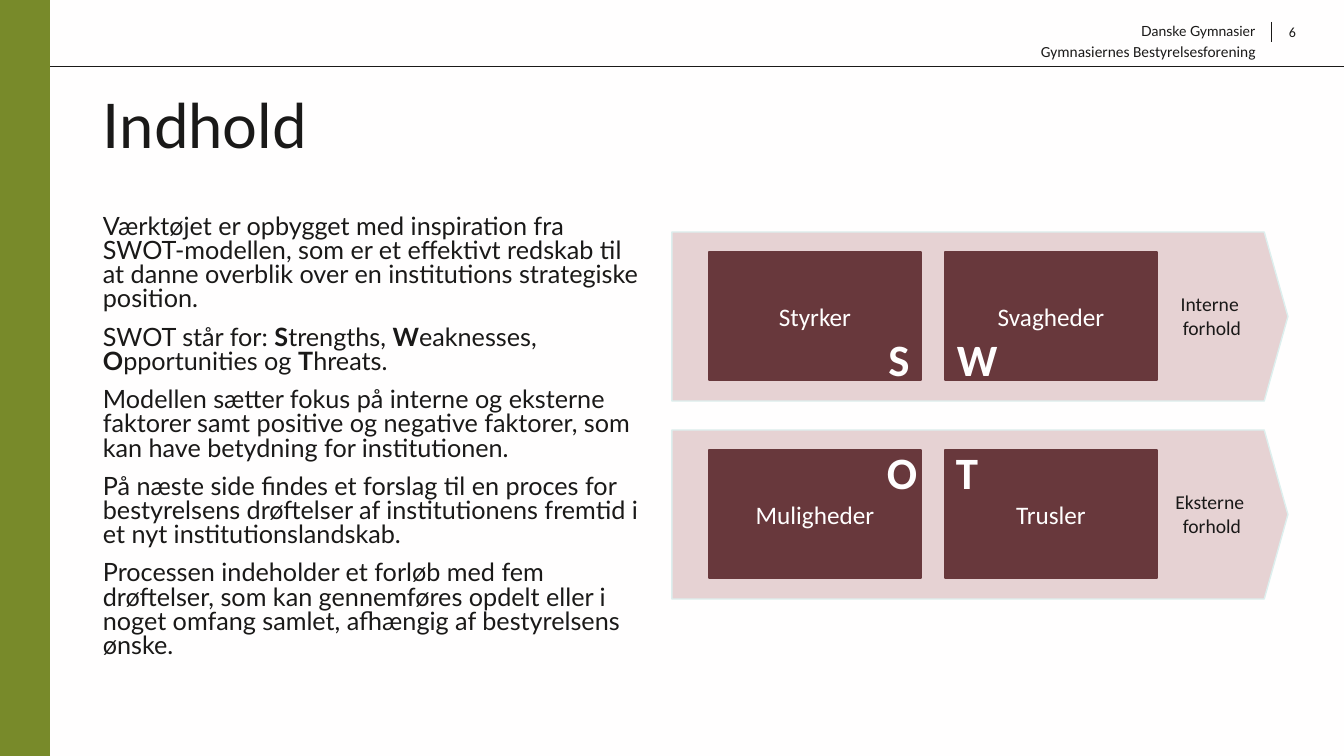
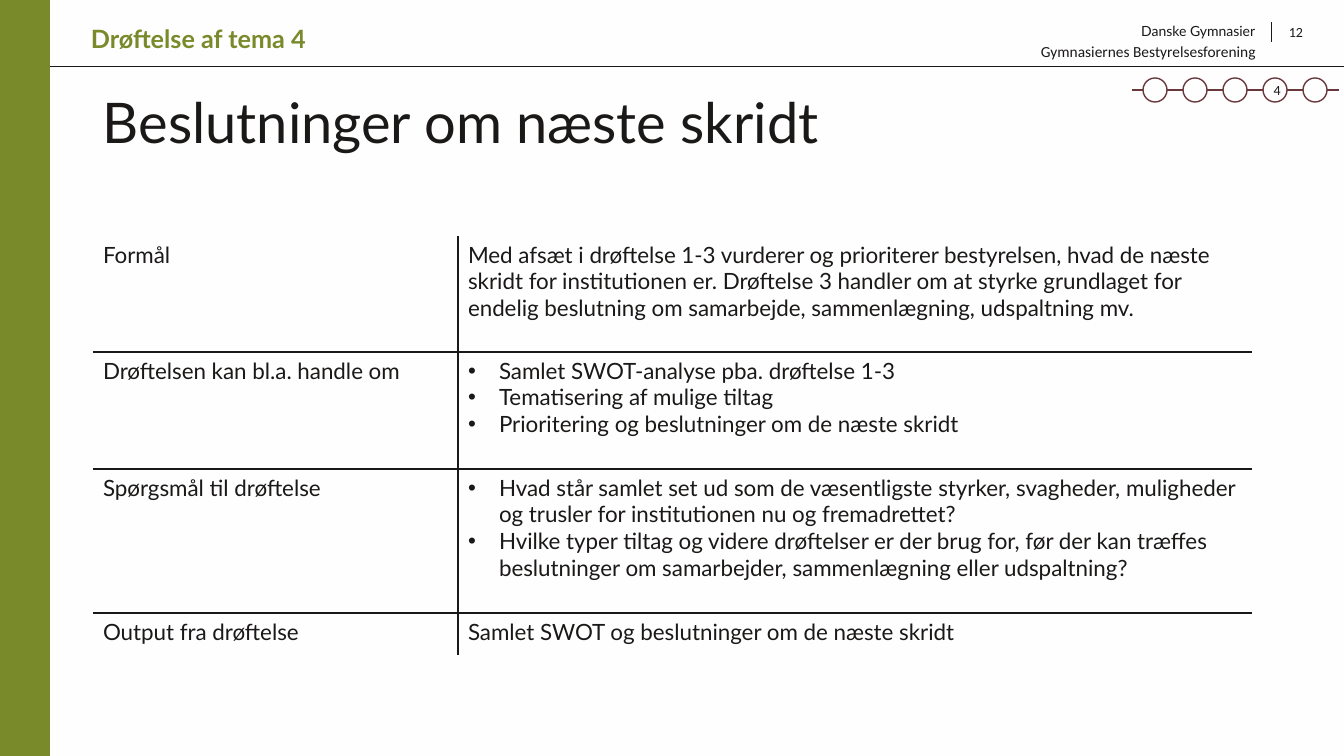
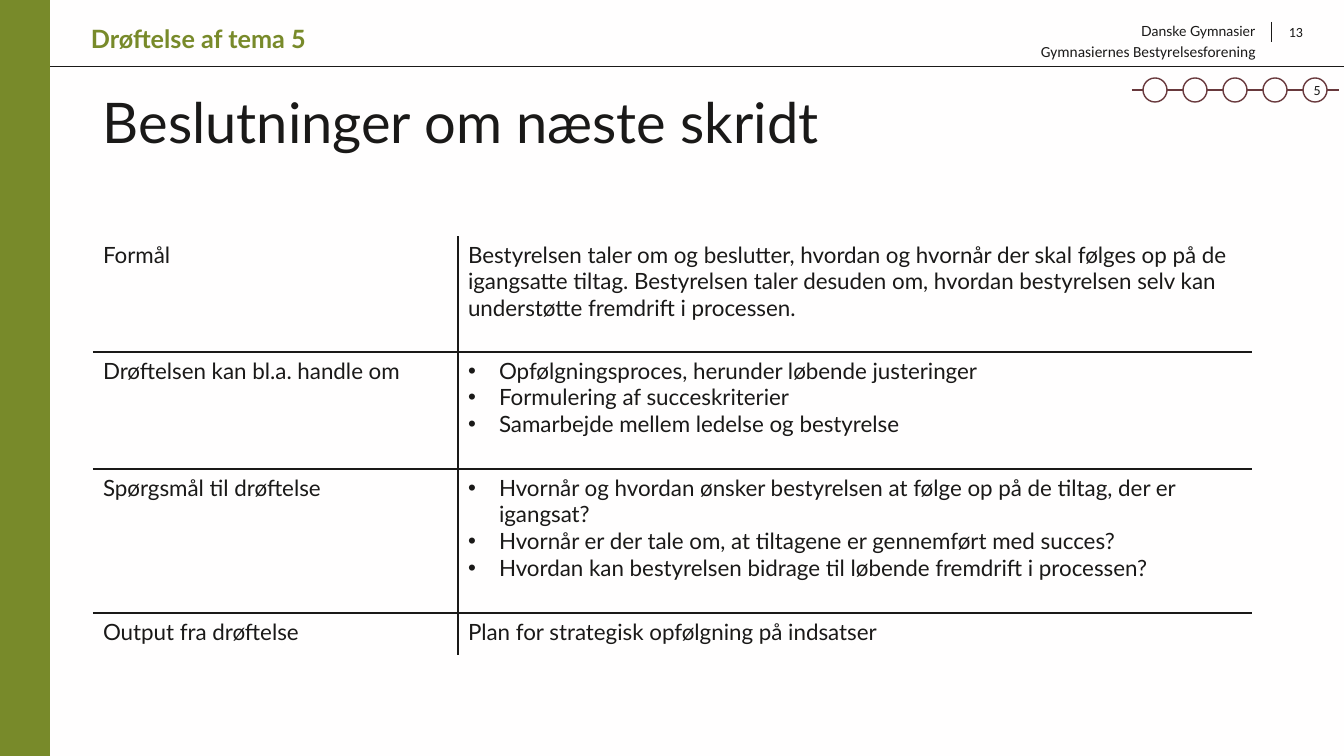
"""Build three slides about a SWOT tool for school boards."""
import pptx
import pptx.util
import pptx.dml.color
import pptx.enum.shapes
import pptx.enum.text
import pptx.oxml.ns
import lxml.etree

INK, PAPER, GREEN = "1A1918", "FFFEFE", "788A2A"
WINE, ROSE, MIST = "68383C", "E6D2D3", "DDEFEE"
LATO, CALI = "Lato", "Calibri"
WIDE, HIGH = 1344, 756
SCALE = 914400 / 100.8
KIND = pptx.enum.shapes.MSO_SHAPE
ALIGN = pptx.enum.text.PP_ALIGN
MIDDLE = pptx.enum.text.MSO_ANCHOR.MIDDLE

INTRO = [
    "Værktøjet er opbygget med inspiration fra SWOT-modellen, som er et effektivt redskab til at danne overblik over en institutions strategiske position.",
    "SWOT står for: *S*trengths, *W*eaknesses, *O*pportunities og *T*hreats.",
    "Modellen sætter fokus på interne og eksterne faktorer samt positive og negative faktorer, som kan have betydning for institutionen.",
    "På næste side findes et forslag til en proces for bestyrelsens drøftelser af institutionens fremtid i et nyt institutionslandskab.",
    "Processen indeholder et forløb med fem drøftelser, som kan gennemføres opdelt eller i noget omfang samlet, afhængig af bestyrelsens ønske.",
]
SWOT = [
    ("Interne \nforhold", 85, [("Styrker", "S", 168), ("Svagheder", "W", 2)]),
    ("Eksterne \nforhold", 0, [("Muligheder", "O", 168), ("Trusler", "T", 0)]),
]
HEADS = ["Formål", "Drøftelsen kan bl.a. handle om", "Spørgsmål til drøftelse", "Output fra drøftelse"]
ROWS = [116, 117, 144, 42]
COLS = [365, 794]
THEMES = [
    (12, 4, "Beslutninger om næste skridt", [
        "Med afsæt i drøftelse 1-3 vurderer og prioriterer bestyrelsen, hvad de næste skridt for institutionen er. Drøftelse 3 handler om at styrke grundlaget for endelig beslutning om samarbejde, sammenlægning, udspaltning mv.",
        ["Samlet SWOT-analyse pba. drøftelse 1-3",
         "Tematisering af mulige tiltag",
         "Prioritering og beslutninger om de næste skridt"],
        ["Hvad står samlet set ud som de væsentligste styrker, svagheder, muligheder og trusler for institutionen nu og fremadrettet?",
         "Hvilke typer tiltag og videre drøftelser er der brug for, før der kan træffes beslutninger om samarbejder, sammenlægning eller udspaltning?"],
        "Samlet SWOT og beslutninger om de næste skridt",
    ]),
    (13, 5, "Beslutninger om næste skridt", [
        "Bestyrelsen taler om og beslutter, hvordan og hvornår der skal følges op på de igangsatte tiltag. Bestyrelsen taler desuden om, hvordan bestyrelsen selv kan understøtte fremdrift i processen.",
        ["Opfølgningsproces, herunder løbende justeringer",
         "Formulering af succeskriterier",
         "Samarbejde mellem ledelse og bestyrelse"],
        ["Hvornår og hvordan ønsker bestyrelsen at følge op på de tiltag, der er igangsat?",
         "Hvornår er der tale om, at tiltagene er gennemført med succes?",
         "Hvordan kan bestyrelsen bidrage til løbende fremdrift i processen?"],
        "Plan for strategisk opfølgning på indsatser",
    ]),
]


def px(*sizes):
    """Turn px into EMU."""
    return [round(size * SCALE) for size in sizes]


def tint(code):
    """Turn a hex string into a colour."""
    return pptx.dml.color.RGBColor.from_string(code)


def style(font, size, face, color, bold=False):
    """Set the look of a font."""
    font.size, font.name, font.bold = pptx.util.Pt(size), face, bold
    font.color.rgb = tint(color)


def write(frame, text, size, face, color=INK, bold=False, align=None, lead=None, gap=0):
    """Fill a frame, one paragraph a line, with bold between stars."""
    frame.word_wrap = True
    for row, line in enumerate(text.split("\n")):
        para = frame.paragraphs[0] if row == 0 else frame.add_paragraph()
        para.alignment, para.line_spacing = align, lead
        if row and gap:
            para.space_before = pptx.util.Pt(gap)
        for turn, part in enumerate(line.split("*")):
            run = para.add_run()
            run.text = part
            style(run.font, size, face, color, bold or turn % 2 == 1)


def label(slide, box, text, size, face, **look):
    """Add a text box."""
    frame = slide.shapes.add_textbox(*px(*box)).text_frame
    write(frame, text, size, face, **look)
    return frame


def block(slide, kind, box, fill, edge=None, text="", size=18, color=PAPER, bold=False):
    """Add a filled shape with centred text."""
    shape = slide.shapes.add_shape(kind, *px(*box))
    shape.shadow.inherit = False
    shape.fill.solid()
    shape.fill.fore_color.rgb = tint(fill)
    if edge:
        shape.line.color.rgb = tint(edge)
        shape.line.width = pptx.util.Pt(1)
    else:
        shape.line.fill.background()
    if text:
        shape.text_frame.vertical_anchor = MIDDLE
        write(shape.text_frame, text, size, CALI, color, bold, ALIGN.CENTER)
    return shape


def rule(slide, ends, color, width):
    """Add a straight line."""
    line = slide.shapes.add_connector(pptx.enum.shapes.MSO_CONNECTOR.STRAIGHT, *px(*ends))
    line.line.color.rgb = tint(color)
    line.line.width = pptx.util.Pt(width)
    lxml.etree.SubElement(line._element.spPr, pptx.oxml.ns.qn("a:effectLst"))


def start(deck, page, title, size):
    """Add a slide with the shared band, header and title."""
    slide = deck.slides.add_slide(deck.slide_layouts[6])
    slide.background.fill.solid()
    slide.background.fill.fore_color.rgb = tint(PAPER)
    rule(slide, (0, 66, WIDE, 66), INK, 0.5)
    rule(slide, (1272, 22, 1272, 42), INK, 0.75)
    block(slide, KIND.RECTANGLE, (0, 0, 49, HIGH), GREEN, GREEN)
    label(slide, (1114, 18, 151, 27), "Danske Gymnasier", 10, LATO, align=ALIGN.RIGHT)
    label(slide, (1031, 37, 249, 29), "Gymnasiernes Bestyrelsesforening", 11, CALI)
    label(slide, (1279, 19, 49, 40), str(page), 10, CALI)
    label(slide, (93, 90, 1159, 146), title, size, LATO, lead=0.9)
    return slide


def model(slide):
    """Draw the SWOT boxes on two arrows."""
    for row, (name, drop, pair) in enumerate(SWOT):
        top = 232 + 198 * row
        arrow = block(slide, KIND.PENTAGON, (672, top, 616, 169), ROSE, MIST)
        arrow.adjustments[0] = 0.14
        for col, (word, sign, shift) in enumerate(pair):
            left = 709 + 236 * col
            block(slide, KIND.RECTANGLE, (left, top + 20, 212, 128), WINE, WINE, word)
            block(slide, KIND.RECTANGLE, (left + shift, top + 20 + drop, 44, 43), WINE,
                  text=sign, size=32, bold=True)
        frame = label(slide, (1154, top + 61, 116, 45), name, 14, CALI, align=ALIGN.CENTER)
        frame.vertical_anchor = MIDDLE


def track(slide, step):
    """Draw the five steps and number the current one."""
    rule(slide, (1132, 90, 1339, 90), WINE, 1)
    for spot in range(1, 6):
        block(slide, KIND.OVAL, (1103 + 40 * spot, 78, 24, 24), PAPER, WINE,
              str(step) if spot == step else "", 10, INK)


def border(cell, shown):
    """Draw the named sides of a cell and clear the rest."""
    props = cell._tc.get_or_add_tcPr()
    for spot, side in enumerate("LRTB"):
        line = pptx.oxml.parse_xml(f'<a:ln{side} {pptx.oxml.ns.nsdecls("a")} w="12700"/>')
        if side in shown:
            fill = lxml.etree.SubElement(line, pptx.oxml.ns.qn("a:solidFill"))
            lxml.etree.SubElement(fill, pptx.oxml.ns.qn("a:srgbClr"), val=INK)
        else:
            lxml.etree.SubElement(line, pptx.oxml.ns.qn("a:noFill"))
        props.insert(spot, line)


def bullet(para):
    """Give a paragraph a hanging bullet."""
    props = para._p.get_or_add_pPr()
    hang = px(31)[0]
    props.set("marL", str(hang))
    props.set("indent", str(-hang))
    lxml.etree.SubElement(props, pptx.oxml.ns.qn("a:buFont"), typeface="Arial")
    lxml.etree.SubElement(props, pptx.oxml.ns.qn("a:buChar"), char="•")


def grid(slide, facts):
    """Add the table of the discussion."""
    table = slide.shapes.add_table(len(ROWS), len(COLS), *px(93, 236, sum(COLS), sum(ROWS))).table
    table.first_row = table.horz_banding = False
    for col, width in enumerate(COLS):
        table.columns[col].width = px(width)[0]
    for row, pair in enumerate(zip(HEADS, facts)):
        table.rows[row].height = px(ROWS[row])[0]
        for col, fact in enumerate(pair):
            cell = table.cell(row, col)
            cell.fill.background()
            border(cell, "RL"[col] + "T" * (row > 0) + "B" * (row < len(ROWS) - 1))
            listed = isinstance(fact, list)
            write(cell.text_frame, "\n".join(fact) if listed else fact, 16, LATO)
            if listed:
                for para in cell.text_frame.paragraphs:
                    bullet(para)


def main():
    """Build and save the deck."""
    deck = pptx.Presentation()
    deck.slide_width, deck.slide_height = px(WIDE, HIGH)
    slide = start(deck, 6, "Indhold", 44)
    label(slide, (93, 211, 560, 480), "\n".join(INTRO), 18, LATO, lead=0.8, gap=10)
    model(slide)
    for page, step, title, facts in THEMES:
        slide = start(deck, page, title, 40)
        label(slide, (81, 18, 321, 40), f"Drøftelse af tema {step}", 18, LATO, color=GREEN, bold=True)
        track(slide, step)
        grid(slide, facts)
    deck.save("out.pptx")


if __name__ == "__main__":
    main()
